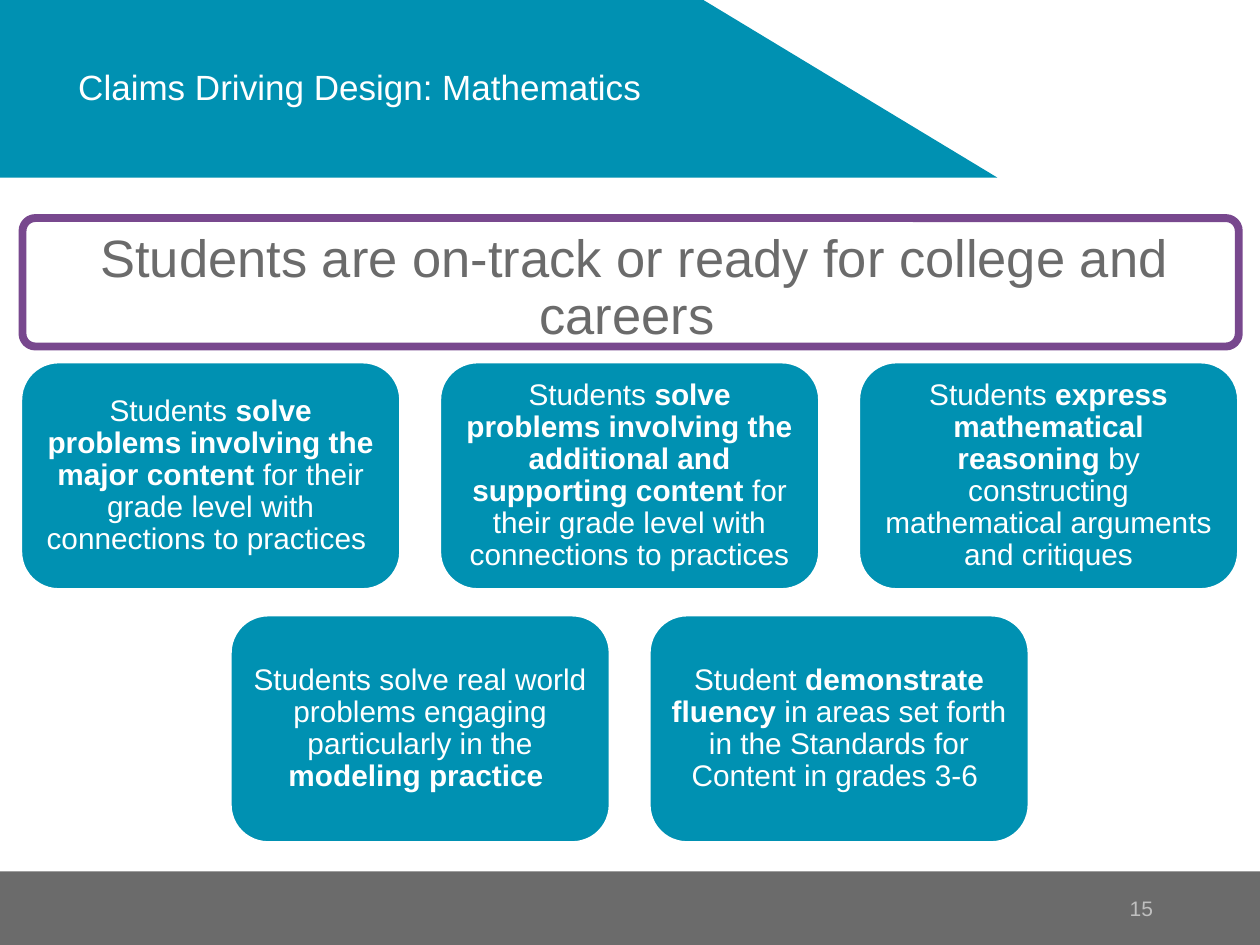
import pptx
import pptx.dml.color
import pptx.enum.shapes
import pptx.enum.text
import pptx.util
from dataclasses import dataclass

Pt = pptx.util.Pt
SHAPE = pptx.enum.shapes.MSO_SHAPE
ALIGN = pptx.enum.text.PP_ALIGN
MIDDLE = pptx.enum.text.MSO_ANCHOR.MIDDLE


@dataclass(frozen=True)
class Theme:
    font: str = "Arial"
    teal: str = "0091B2"
    purple: str = "78488E"
    gray: str = "6B6B6B"
    light_gray: str = "BFBFBF"
    white: str = "FFFFFF"
    title_size: float = 20
    goal_size: float = 30
    claim_size: float = 17
    number_size: float = 12


class SlideBuilder:
    def __init__(self, slide, theme):
        self.slide = slide
        self.theme = theme

    def color(self, value):
        return pptx.dml.color.RGBColor.from_string(value)

    def paint(self, shape, fill, line=None, line_width=0):
        shape.shadow.inherit = False
        shape.fill.solid()
        shape.fill.fore_color.rgb = self.color(fill)
        if line:
            shape.line.color.rgb = self.color(line)
            shape.line.width = Pt(line_width)
        else:
            shape.line.fill.background()

    def set_text(self, shape, runs, size, color, align, insets, spacing=None):
        frame = shape.text_frame
        frame.word_wrap = True
        frame.auto_size = pptx.enum.text.MSO_AUTO_SIZE.NONE
        frame.vertical_anchor = MIDDLE
        left, top, right, bottom = insets
        frame.margin_left, frame.margin_top = Pt(left), Pt(top)
        frame.margin_right, frame.margin_bottom = Pt(right), Pt(bottom)
        paragraph = frame.paragraphs[0]
        paragraph.alignment = align
        paragraph.line_spacing = spacing
        for text, bold in runs:
            run = paragraph.add_run()
            run.text = text
            run.font.name = self.theme.font
            run.font.size = Pt(size)
            run.font.bold = bold
            run.font.color.rgb = self.color(color)

    def shape(self, kind, box, fill, line=None, line_width=0):
        shape = self.slide.shapes.add_shape(kind, *map(Pt, box))
        self.paint(shape, fill, line, line_width)
        return shape

    def polygon(self, points, fill):
        start, *rest = [(Pt(x), Pt(y)) for x, y in points]
        outline = self.slide.shapes.build_freeform(*start)
        outline.add_line_segments(rest, close=True)
        self.paint(outline.convert_to_shape(), fill)

    def title(self, text, box):
        title = self.slide.shapes.title
        title.left, title.top, title.width, title.height = map(Pt, box)
        title.element.getparent().append(title.element)
        self.set_text(title, [(text, False)], self.theme.title_size, self.theme.white,
                      ALIGN.LEFT, (43.2, 3.6, 7.2, 3.6))

    def goal(self, text, box):
        goal = self.shape(SHAPE.ROUNDED_RECTANGLE, box, self.theme.white, self.theme.purple, 4.5)
        goal.adjustments[0] = 0.1
        self.set_text(goal, [(text, False)], self.theme.goal_size, self.theme.gray,
                      ALIGN.CENTER, (10.8, 8, 6.5, 0), 0.9)

    def claim(self, runs, box):
        claim = self.shape(SHAPE.ROUNDED_RECTANGLE, box, self.theme.teal, self.theme.white, 2)
        self.set_text(claim, runs, self.theme.claim_size, self.theme.white,
                      ALIGN.CENTER, (5, 5, 5, 5), 0.9)

    def claim_grid(self, rows, center, top, width, height, gap_x, gap_y):
        for row_index, row in enumerate(rows):
            row_width = len(row) * width + (len(row) - 1) * gap_x
            left = center - row_width / 2
            y = top + row_index * (height + gap_y)
            for column, runs in enumerate(row):
                self.claim(runs, (left + column * (width + gap_x), y, width, height))

    def page_number(self, text, box):
        number = self.slide.shapes.add_textbox(*map(Pt, box))
        self.set_text(number, [(text, False)], self.theme.number_size, self.theme.light_gray,
                      ALIGN.RIGHT, (7.2, 3.6, 7.2, 3.6))


CLAIM_ROWS = [
    [
        [("Students ", False),
         ("solve problems involving the major content ", True),
         ("for their grade level with connections to practices ", False)],
        [("Students ", False),
         ("solve problems involving the additional and supporting content ", True),
         ("for their grade level with connections to practices", False)],
        [("Students ", False),
         ("express mathematical reasoning ", True),
         ("by constructing mathematical arguments and critiques", False)],
    ],
    [
        [("Students solve real world problems engaging particularly in the ", False),
         ("modeling practice ", True)],
        [("Student ", False),
         ("demonstrate fluency ", True),
         ("in areas set forth in the Standards for Content in grades 3-6 ", False)],
    ],
]


def main():
    presentation = pptx.Presentation()
    presentation.slide_width, presentation.slide_height = Pt(720), Pt(540)
    slide = presentation.slides.add_slide(presentation.slide_layouts[5])
    theme = Theme()
    builder = SlideBuilder(slide, theme)

    builder.shape(SHAPE.RECTANGLE, (0, 498, 720, 42), theme.gray)
    builder.polygon([(0, 0), (402, 0), (570, 101.5), (0, 101.5)], theme.teal)
    builder.claim_grid(CLAIM_ROWS, center=359.8, top=206.7, width=217.4, height=130.4,
                       gap_x=22, gap_y=14.2)
    builder.title("Claims Driving Design: Mathematics", (1.5, 1.5, 498, 96))
    builder.goal("Students are on-track or ready for college and careers ",
                 (12.9, 124.6, 695, 73.4))
    builder.page_number("15", (546, 498, 120, 42))

    presentation.save("out.pptx")


if __name__ == "__main__":
    main()
